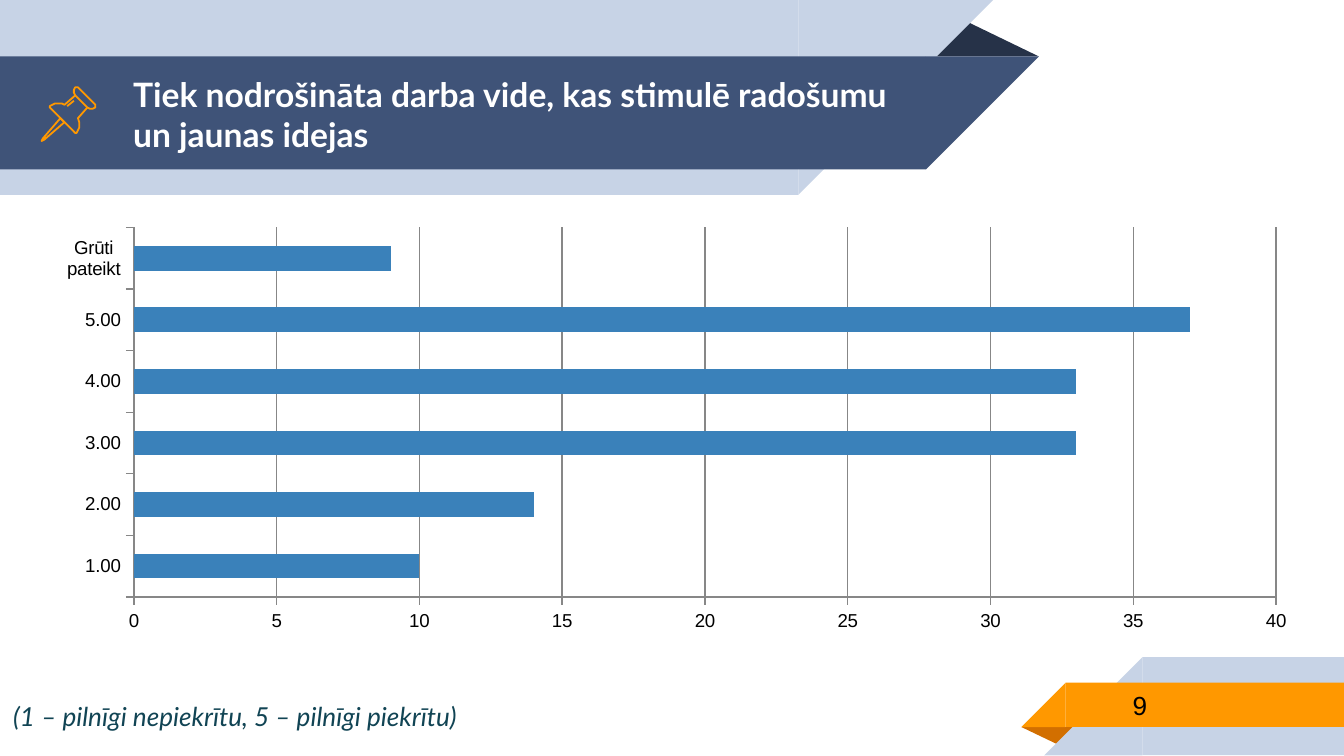
from pptx import Presentation
from pptx.chart.data import CategoryChartData
from pptx.dml.color import RGBColor
from pptx.enum.chart import XL_CHART_TYPE, XL_TICK_MARK
from pptx.enum.shapes import MSO_SHAPE
from pptx.enum.text import MSO_ANCHOR, PP_ALIGN
from pptx.util import Inches, Pt

RECT = MSO_SHAPE.RECTANGLE
RIGHT = MSO_SHAPE.RIGHT_TRIANGLE
PEAK = MSO_SHAPE.ISOSCELES_TRIANGLE
BAR = XL_CHART_TYPE.BAR_CLUSTERED
OUT = XL_TICK_MARK.OUTSIDE
MIDDLE = MSO_ANCHOR.MIDDLE
LEFT = PP_ALIGN.LEFT

PALE, NAVY, ORANGE, GRAY = "C7D3E6", "3F5378", "FF9800", "878787"

TITLE = "Tiek nodrošināta darba vide, kas stimulē radošumu un jaunas idejas"
NOTE = "(1 – pilnīgi nepiekrītu, 5 – pilnīgi piekrītu)"
PAGE = "9"
VOTES = [("1.00", 10), ("2.00", 14), ("3.00", 33),
         ("4.00", 33), ("5.00", 37), ("Grūti pateikt", 9)]

BANDS = [
    (PEAK, (6.88, 0.14, 0.85, 0.28), 0, "263248"),
    (RECT, (0, 0, 5.94, 1.45), 0, PALE),
    (RIGHT, (5.94, 0, 1.45, 1.45), 90, PALE),
    (RECT, (0, 0.42, 6.89, 0.84), 0, NAVY),
    (RIGHT, (6.89, 0.42, 0.84, 0.84), 90, NAVY),
    (PEAK, (7.6, 5.41, 0.43, 0.14), 180, "D26F00"),
    (RECT, (8.5, 4.89, 1.5, 0.73), 0, PALE),
    (RIGHT, (7.77, 4.89, 0.73, 0.73), 270, PALE),
    (RECT, (7.93, 5.08, 2.07, 0.33), 0, ORANGE),
    (RIGHT, (7.6, 5.08, 0.33, 0.33), 270, ORANGE),
]

PIN = [
    ([(45, 88), (32, 103), (31, 105), (33, 104), (48, 91)], True),
    ([(56, 71), (65, 80), (67, 81), (69, 81), (71, 80), (71, 78),
      (58, 65), (56, 65), (55, 67), (55, 69)], True),
    ([(56, 71), (48, 78), (46, 77), (44, 77), (41, 77), (39, 78),
      (37, 79), (37, 80), (38, 81), (55, 98), (56, 99), (57, 99),
      (58, 97), (59, 95), (59, 91), (58, 88), (65, 80)], False),
    ([(50, 79), (55, 75)], False),
]


def color(code):
    return RGBColor.from_string(code)


def place(shape, box):
    shape.left, shape.top, shape.width, shape.height = map(Inches, box)


def style(font, name, size, code, bold=False, italic=False):
    font.name, font.size = name, Pt(size)
    font.bold, font.italic = bold, italic
    font.color.rgb = color(code)


def write(shape, text, *look, pad=0.1, wrap=True):
    frame = shape.text_frame
    frame.text = text
    frame.word_wrap = wrap
    frame.vertical_anchor = MIDDLE
    frame.margin_left = frame.margin_right = Inches(0.1)
    frame.margin_top = frame.margin_bottom = Inches(pad)
    line = frame.paragraphs[0]
    line.alignment = LEFT
    style(line.font, *look)


def add_band(shapes, kind, box, turn, code):
    band = shapes.add_shape(kind, *map(Inches, box))
    band.shadow.inherit = False
    band.rotation = turn
    band.fill.solid()
    band.fill.fore_color.rgb = color(code)
    band.line.fill.background()
    if kind == PEAK:
        band.adjustments[0] = 0.32


def add_stroke(shapes, dots, closed):
    pen = shapes.build_freeform(*dots[0], scale=Inches(0.01))
    pen.add_line_segments(dots[1:], close=closed)
    stroke = pen.convert_to_shape()
    stroke.shadow.inherit = False
    stroke.fill.background()
    stroke.line.color.rgb = color(ORANGE)
    stroke.line.width = Pt(0.96)


def add_votes(shapes):
    data = CategoryChartData()
    data.categories = [name for name, count in VOTES]
    data.add_series("Series 1", [count for name, count in VOTES])
    box = map(Inches, (0.31, 1.63, 9.45, 3.13))
    chart = shapes.add_chart(BAR, *box, data).chart
    chart.has_legend = chart.has_title = False
    style(chart.font, "Arial", 10, "000000")
    plot = chart.plots[0]
    plot.gap_width = 150
    plot.vary_by_categories = False
    fill = plot.series[0].format.fill
    fill.solid()
    fill.fore_color.rgb = color("3A81BA")
    scale = chart.value_axis
    scale.minimum_scale, scale.maximum_scale, scale.major_unit = 0, 40, 5
    scale.has_major_gridlines = True
    for axis in (scale, chart.category_axis):
        axis.major_tick_mark = OUT
        axis.format.line.color.rgb = color(GRAY)
    scale.major_gridlines.format.line.color.rgb = color(GRAY)


def main():
    deck = Presentation()
    deck.slide_width = Inches(10)
    deck.slide_height = deck.slide_width * 9 // 16
    slide = deck.slides.add_slide(deck.slide_layouts[5])
    shapes = slide.shapes
    for band in BANDS:
        add_band(shapes, *band)

    title = shapes.title
    title.element.getparent().append(title.element)
    place(title, (0.89, 0.43, 6.01, 0.84))
    write(title, TITLE, "Lato", 18, "FFFFFF", True)

    page = shapes.add_textbox(*map(Inches, (8.33, 5.07, 1.63, 0.35)))
    write(page, PAGE, "Arial", 14, "000000")
    for dots, closed in PIN:
        add_stroke(shapes, dots, closed)
    note = shapes.add_textbox(*map(Inches, (0, 5.16, 3.79, 0.34)))
    write(note, NOTE, "Lato", 14, "114454", False, True, pad=0.05, wrap=False)
    add_votes(shapes)
    deck.save("out.pptx")


if __name__ == "__main__":
    main()
